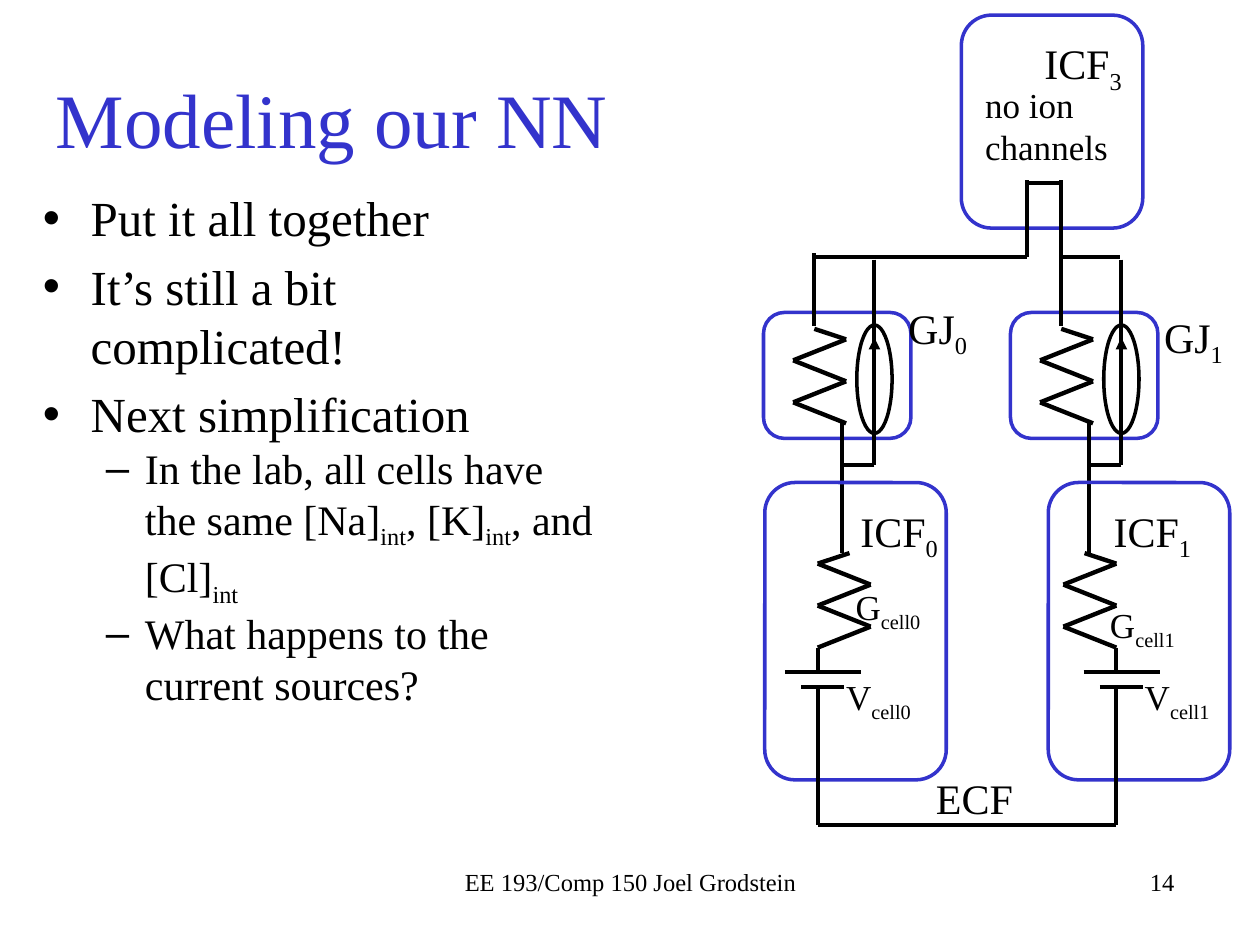
from itertools import pairwise

from lxml.etree import SubElement
from pptx import Presentation
from pptx.dml.color import RGBColor
from pptx.enum.shapes import MSO_CONNECTOR, MSO_SHAPE
from pptx.enum.text import MSO_ANCHOR, MSO_AUTO_SIZE, PP_ALIGN
from pptx.oxml.ns import qn
from pptx.util import Emu, Inches, Pt

COLORS = {"ink": "000000", "accent": "3333CC"}
FONT = "Times New Roman"
WIDTH, HEIGHT = Inches(10), Inches(7.5)
COLUMNS, ROWS = 100, 75  # all places below are in columns and rows


def across(columns):
    return Emu(round(WIDTH * columns / COLUMNS))


def down(rows):
    return Emu(round(HEIGHT * rows / ROWS))


def place(box):
    left, top, width, height = box
    return across(left), down(top), across(width), down(height)


def color(name):
    return RGBColor.from_string(COLORS[name])


def write(para, text, size=24, ink="ink", align=None):
    """Fill a paragraph; underscores switch subscript on and off."""
    para.alignment = align
    for number, part in enumerate(text.split("_")):
        if not part:
            continue
        span = para.add_run()
        span.text = part
        span.font.size, span.font.name = Pt(size), FONT
        span.font.color.rgb = color(ink)
        if number % 2:
            span._r.get_or_add_rPr().set("baseline", "-25000")


def label(page, text, box, inset=True, wrap=True, **look):
    frame = page.shapes.add_textbox(*place(box)).text_frame
    frame.word_wrap = wrap
    if not inset:
        frame.margin_left = frame.margin_right = 0
        frame.margin_top = frame.margin_bottom = 0
    write(frame.paragraphs[0], text, **look)


def outline(page, kind, box, ink="accent"):
    shape = page.shapes.add_shape(kind, *place(box))
    shape.shadow.inherit = False
    shape.fill.background()
    shape.line.color.rgb = color(ink)
    shape.line.width = Pt(2)


def wire(page, *points, width=2.25, arrow=False):
    """Join the points, one after another, with straight lines."""
    for (x1, y1), (x2, y2) in pairwise(points):
        line = page.shapes.add_connector(
            MSO_CONNECTOR.STRAIGHT, across(x1), down(y1), across(x2), down(y2))
        line.line.color.rgb = color("ink")
        line.line.width = Pt(width)
        if arrow:
            SubElement(line.line._get_or_add_ln(), qn("a:tailEnd"), type="triangle")
        SubElement(line._element.spPr, qn("a:effectLst"))


def resistor(page, box, right_first=True):
    left, top, width, height = box
    shares = [0.4, 1, 0, 1, 0, 1]
    if not right_first:
        shares = [1 - share for share in shares]
    ninths = [0, 1, 3, 5, 7, 9]
    wire(page, *[(left + width * share, top + height * ninth / 9)
                 for share, ninth in zip(shares, ninths)], width=2.5)


def add_bullet(para, char, indent, hanging):
    props = para._p.get_or_add_pPr()
    props.set("marL", str(Inches(indent)))
    props.set("indent", str(-Inches(hanging)))
    SubElement(props, qn("a:buChar"), char=char)


def heading(page, box):
    title = page.shapes.title
    title.left, title.top, title.width, title.height = place(box)
    title.text_frame.vertical_anchor = MSO_ANCHOR.MIDDLE
    title.text_frame.auto_size = MSO_AUTO_SIZE.NONE
    write(title.text_frame.paragraphs[0], "Modeling our NN", size=44,
          ink="accent", align=PP_ALIGN.CENTER)


def bullet_list(page, box):
    items = [
        (0, "Put it all together"),
        (0, "It’s still a bit complicated!"),
        (0, "Next simplification"),
        (1, "In the lab, all cells have the same [Na]_int_, [K]_int_, and [Cl]_int"),
        (1, "What happens to the current sources?"),
    ]
    # size, space before, bullet, indent and hanging of each level
    levels = [(28, 5.6, "•", 0.38, 0.38), (24, 0, "–", 0.81, 0.31)]
    body = page.placeholders[1]
    body.left, body.top, body.width, body.height = place(box)
    frame = body.text_frame
    frame.auto_size = MSO_AUTO_SIZE.NONE
    for number, (level, text) in enumerate(items):
        para = frame.add_paragraph() if number else frame.paragraphs[0]
        size, before, char, indent, hanging = levels[level]
        para.level = level
        para.space_before = Pt(before)
        write(para, text, size=size)
        add_bullet(para, char, indent, hanging)


def cell(page, number, box, stem, name_left, conductance_at, right_first):
    """Cell with a conductance and a battery on its stem."""
    left, top, _, height = box
    x = left + stem
    outline(page, MSO_SHAPE.ROUNDED_RECTANGLE, box)
    label(page, f"ICF_{number}", (left + name_left, top + 1.3, 8.7, 5))
    zigzag_left = x - 4.2 if right_first else x
    resistor(page, (zigzag_left, top + 5.6, 4.2, 7.5), right_first)
    # Battery
    wire(page, (x, top + 13.1), (x, top + 15))
    wire(page, (x - 2.6, top + 15), (x + 3.45, top + 15))
    wire(page, (x - 1.3, top + 16.2), (x + 2.1, top + 16.2))
    wire(page, (x, top + 16.2), (x, top + height + 3.6))
    # Values
    dx, dy = conductance_at
    values = [("G", left + dx, top + dy), ("V", x + 2.25, top + 15.3)]
    for letter, value_left, value_top in values:
        label(page, f"{letter}_cell{number}", (value_left, value_top, 5.7, 3.4),
              size=20, inset=False, wrap=False)


def gap_junction(page, number, box, wire_top, name_at):
    """Conductance and current source side by side, with their wires."""
    left, top, _, height = box
    lead, stem, source = left + 4, left + 6.25, left + 8.8
    outline(page, MSO_SHAPE.ROUNDED_RECTANGLE, box)
    resistor(page, (left + 2.35, top + 1.3, 4.2, 7.5))
    wire(page, (lead, wire_top), (lead, top + 1.1))
    wire(page, (stem, top + 8.5), (stem, top + 19.1))
    # Current source
    outline(page, MSO_SHAPE.OVAL, (left + 7.4, top + 1, 2.8, 8.6), ink="ink")
    wire(page, (source, top - 4.2), (source, top + 4.5))
    wire(page, (source, top + height + 2.1), (source, top + 2), arrow=True)
    wire(page, (source, top + height + 2.1), (stem, top + height + 2.1))
    dx, dy = name_at
    label(page, f"GJ_{number}", (left + dx, top + dy, 7.4, 5))


def top_cell(page, box):
    left, top, _, _ = box
    outline(page, MSO_SHAPE.ROUNDED_RECTANGLE, box)
    label(page, "ICF_3", (left + 5.6, top + 1.3, 8.7, 5))
    label(page, "no ion channels", (left + 0.9, top + 4.9, 11.9, 7.7), size=20)


def circuit(page):
    top_cell(page, (76.3, 1.2, 14.4, 16.9))
    gap_junction(page, 0, (60.6, 24.8, 11.7, 10), 20.1, (10.5, -1.3))
    gap_junction(page, 1, (80.2, 24.8, 11.7, 10), 14.3, (11.2, -0.6))
    cell(page, 0, (60.7, 38.3, 14.4, 23.6), 4.2, 6.6, (7.2, 8.2), False)
    cell(page, 1, (83.2, 38.3, 14.4, 23.6), 5.4, 4.2, (4.9, 9.6), True)
    # Wires between the parts
    wire(page, (84.2, 14.5), (81.5, 14.5))
    wire(page, (81.5, 14.3), (81.5, 20.4), (64.8, 20.4))
    wire(page, (84.2, 20.4), (88.9, 20.4))
    wire(page, (64.9, 65.5), (88.6, 65.5))
    label(page, "ECF", (73.3, 60.8, 8.7, 5))


def footer(page):
    label(page, "EE 193/Comp 150 Joel Grodstein", (34.2, 68.3, 31.7, 3.4),
          size=14, align=PP_ALIGN.CENTER)
    label(page, "14", (62.5, 68.3, 31.7, 5), size=14, align=PP_ALIGN.RIGHT)


def main():
    deck = Presentation()
    deck.slide_width, deck.slide_height = WIDTH, HEIGHT
    page = deck.slides.add_slide(deck.slide_layouts[1])
    heading(page, (2.3, 3.1, 48.1, 12.5))
    bullet_list(page, (2.4, 14.4, 45.8, 43.5))
    circuit(page)
    footer(page)
    deck.save("out.pptx")


if __name__ == "__main__":
    main()
